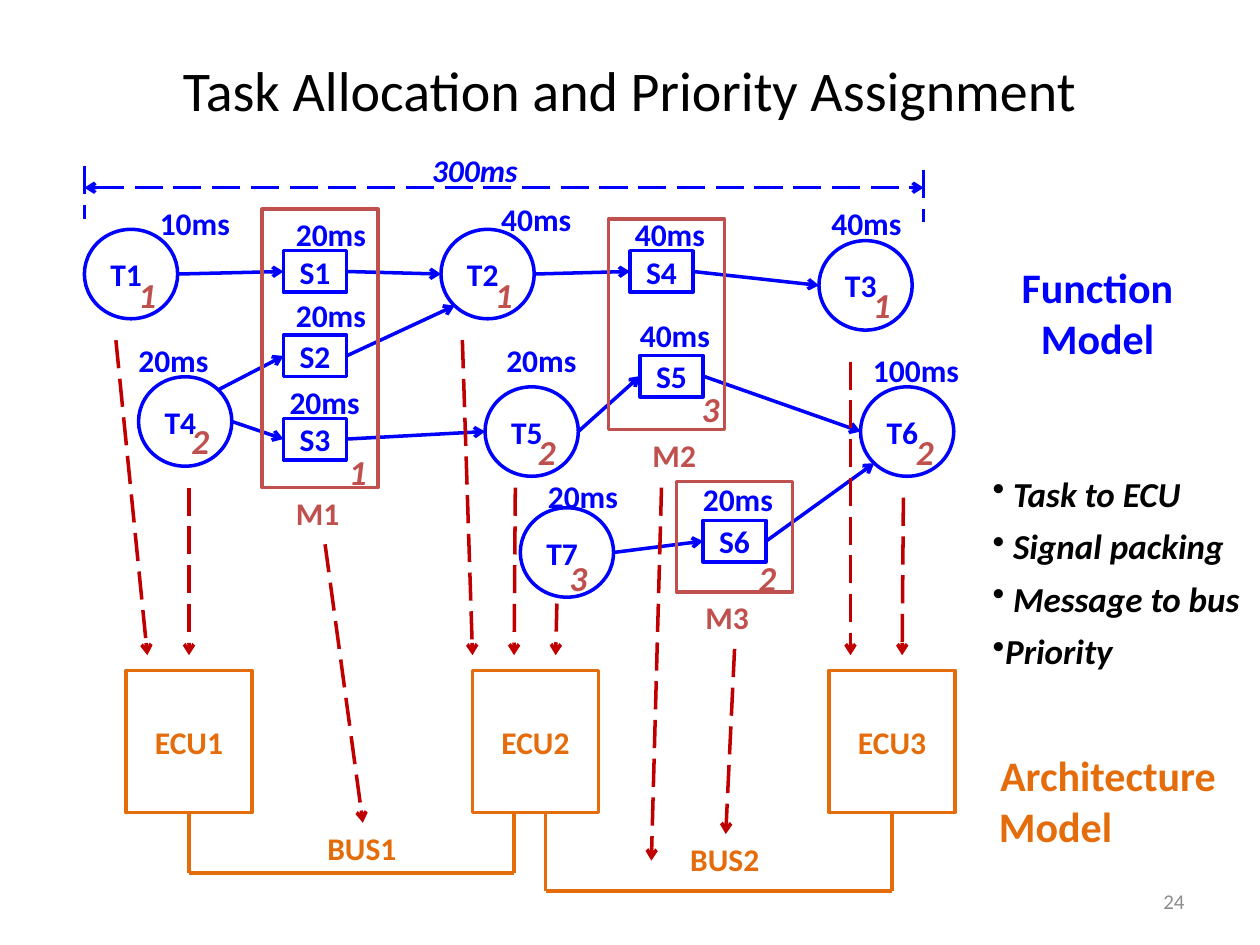
from dataclasses import dataclass
from math import sqrt

from pptx import Presentation
from pptx.dml.color import RGBColor
from pptx.enum.dml import MSO_LINE
from pptx.enum.shapes import MSO_CONNECTOR, MSO_SHAPE
from pptx.enum.text import MSO_ANCHOR, MSO_AUTO_SIZE, PP_ALIGN
from pptx.oxml.ns import qn
from pptx.util import Inches, Pt
from lxml.etree import SubElement


@dataclass(frozen=True)
class Theme:
    font: str = "Calibri"
    black: RGBColor = RGBColor(0x00, 0x00, 0x00)
    gray: RGBColor = RGBColor(0x8C, 0x8C, 0x8C)
    function: RGBColor = RGBColor(0x00, 0x00, 0xFF)
    message: RGBColor = RGBColor(0xC0, 0x50, 0x4D)
    mapping: RGBColor = RGBColor(0xC0, 0x00, 0x00)
    architecture: RGBColor = RGBColor(0xE4, 0x6C, 0x0A)
    title: int = 32
    heading: int = 24
    note: int = 20
    label: int = 18
    footer: int = 12
    stroke: int = 2


@dataclass(frozen=True)
class Box:
    left: float
    top: float
    width: float
    height: float

    def inner(self, x, y, width, height):
        return Box(self.left + x, self.top + y, width, height)

    def point(self, x, y):
        return self.left + x, self.top + y

    def side(self, dx, dy):
        """Point on the inscribed ellipse in direction (dx, dy)."""
        length = sqrt(dx * dx + dy * dy)
        return self.point(self.width / 2 * (1 + dx / length),
                          self.height / 2 * (1 + dy / length))

    def inches(self):
        return [Inches(v) for v in (self.left, self.top, self.width, self.height)]


THEME = Theme()
LABEL_HEIGHT = 0.4

# Task: position, period and its position, priority and its position
TASKS = {
    "T1": (0.17, 0.82, "10ms", 0.67, 0.57, "1", 0.5, 1.12),
    "T2": (3, 0.82, "40ms", 3.38, 0.54, "1", 3.33, 1.12),
    "T3": (6, 0.91, "40ms", 6, 0.57, "1", 6.33, 1.2),
    "T4": (0.6, 1.99, "20ms", 0.5, 1.66, "2", 0.92, 2.28),
    "T5": (3.35, 2.07, "20ms", 3.42, 1.66, "2", 3.67, 2.37),
    "T6": (6.33, 2.07, "100ms", 6.33, 1.74, "2", 6.67, 2.37),
    "T7": (3.63, 3.03, "20ms", 3.75, 2.74, "3", 3.92, 3.37),
}
# Signal: position, period and its position
SIGNALS = {
    "S1": (1.75, 0.99, "20ms", 1.75, 0.66),
    "S2": (1.75, 1.66, "20ms", 1.75, 1.3),
    "S3": (1.75, 2.32, "20ms", 1.7, 1.99),
    "S4": (4.5, 0.99, "40ms", 4.44, 0.66),
    "S5": (4.58, 1.82, "40ms", 4.48, 1.46),
    "S6": (5.08, 3.13, "20ms", 4.98, 2.76),
}
# Message: position, height, label x, priority and its position
MESSAGES = {
    "M1": (1.58, 0.66, 2.21, 1.75, "1", 2.17, 2.53),
    "M2": (4.33, 0.74, 1.67, 4.58, "3", 4.97, 2.03),
    "M3": (4.87, 2.82, 0.88, 5, "2", 5.42, 3.37),
}
RIGHT, LEFT, UP_RIGHT, DOWN_LEFT = (1, 0), (-1, 0), (1, -1), (-1, 1)
# Sender task and its side, signal, receiver task and its side
FLOWS = [
    ("T1", RIGHT, "S1", "T2", LEFT), ("T4", UP_RIGHT, "S2", "T2", DOWN_LEFT),
    ("T4", RIGHT, "S3", "T5", LEFT), ("T2", RIGHT, "S4", "T3", LEFT),
    ("T5", RIGHT, "S5", "T6", LEFT), ("T7", RIGHT, "S6", "T6", DOWN_LEFT),
]
ECU_ARROW_END = 2.7
TASK_ARROWS = [(0.42, 0.2, 0.67), (1, 1.37, 1), (3.17, 0.2, 3.25), (3.59, 1.37, 3.58),
               (3.92, 2.29, 3.91), (6.25, 0.37, 6.25), (6.67, 1.45, 6.66)]
MESSAGE_ARROWS = [(2.08, 1.82, 2.38, 4.03), (4.75, 1.37, 4.67, 4.33),
                  (5.33, 2.65, 5.26, 4.12)]
ECUS = {"ECU1": 0, "ECU2": 2.75, "ECU3": 5.58}
# Bus: left end, right end, depth, label position
BUSES = {"BUS1": (0.5, 3.08, 1.61, 1.5, 1.21), "BUS2": (3.33, 6.08, 1.75, 4.38, 1.3)}


def write(frame, lines, size, color, bold=True, italic=False, align=None):
    for index, line in enumerate(lines):
        paragraph = frame.paragraphs[0] if index == 0 else frame.add_paragraph()
        paragraph.text = line
        paragraph.alignment = align or PP_ALIGN.LEFT
        font = paragraph.font
        font.name, font.size, font.bold, font.italic = THEME.font, Pt(size), bold, italic
        font.color.rgb = color


def add_text(slide, box, lines, size, color, wrap=False, anchor=MSO_ANCHOR.TOP, **style):
    frame = slide.shapes.add_textbox(*box.inches()).text_frame
    frame.word_wrap = wrap
    frame.auto_size = MSO_AUTO_SIZE.NONE if wrap else MSO_AUTO_SIZE.SHAPE_TO_FIT_TEXT
    frame.vertical_anchor = anchor
    write(frame, lines, size, color, **style)
    return frame


def add_label(slide, area, x, y, text, color, width=0.76, **style):
    add_text(slide, area.inner(x, y, width, LABEL_HEIGHT), [text], THEME.label, color, **style)


def add_priority(slide, area, x, y, text):
    add_text(slide, area.inner(x, y, 0.34, 0.44), [text], THEME.note, THEME.message, italic=True)


def add_outline(slide, kind, box, color, text=None, align=PP_ALIGN.CENTER, wrap=True):
    shape = slide.shapes.add_shape(kind, *box.inches())
    shape.shadow.inherit = False
    shape.fill.background()
    shape.line.color.rgb, shape.line.width = color, Pt(THEME.stroke)
    if text:
        shape.text_frame.word_wrap = wrap
        shape.text_frame.vertical_anchor = MSO_ANCHOR.MIDDLE
        write(shape.text_frame, [text], THEME.label, color, align=align)
    return shape


def add_line(slide, start, end, color, dashed=False, heads=()):
    points = [Inches(v) for v in (*start, *end)]
    connector = slide.shapes.add_connector(MSO_CONNECTOR.STRAIGHT, *points)
    connector.line.color.rgb, connector.line.width = color, Pt(THEME.stroke)
    if dashed:
        connector.line.dash_style = MSO_LINE.LONG_DASH
    properties = connector._element.spPr
    for head in heads:
        SubElement(properties.find(qn("a:ln")), qn(f"a:{head}"), type="arrow")
    SubElement(properties, qn("a:effectLst"))
    return connector


def add_function_model(slide, area):
    blue, red = THEME.function, THEME.message
    # Tasks and signals
    circles, signals = {}, {}
    for name, (x, y, *_) in TASKS.items():
        circles[name] = area.inner(x, y, 0.74, 0.71)
        add_outline(slide, MSO_SHAPE.OVAL, circles[name], blue, name, PP_ALIGN.LEFT, False)
    for name, (x, y, *_) in SIGNALS.items():
        signals[name] = add_outline(slide, MSO_SHAPE.RECTANGLE, area.inner(x, y, 0.5, 0.33),
                                    blue, name)
    # Data flow into and out of each signal; the joined end moves to the signal
    for sender, out_side, signal, receiver, in_side in FLOWS:
        start, end = circles[sender].side(*out_side), circles[receiver].side(*in_side)
        add_line(slide, start, end, blue, heads=["tailEnd"]).end_connect(signals[signal], 1)
        add_line(slide, start, end, blue, heads=["tailEnd"]).begin_connect(signals[signal], 3)
    # Messages that pack the signals
    for name, (x, y, height, label_x, priority, px, py) in MESSAGES.items():
        add_outline(slide, MSO_SHAPE.RECTANGLE, area.inner(x, y, 0.92, height), red)
        add_label(slide, area, label_x, y + height, name, red, width=0.55)
        add_priority(slide, area, px, py, priority)
    # Periods and task priorities
    for _, _, period, x, y, *priority in [*TASKS.values(), *SIGNALS.values()]:
        add_label(slide, area, x, y, period, blue, width=0.89 if len(period) > 4 else 0.76)
        if priority:
            text, px, py = priority
            add_priority(slide, area, px, py, text)
    # End-to-end deadline
    for x, top, bottom in [(0.17, 0.32, 0.74), (6.83, 0.35, 0.76)]:
        add_line(slide, area.point(x, top), area.point(x, bottom), blue, dashed=True)
    add_line(slide, area.point(0.17, 0.49), area.point(6.83, 0.49), blue, dashed=True,
             heads=["headEnd", "tailEnd"])
    add_label(slide, area, 2.83, 0.15, "300ms", blue, width=0.95, italic=True)


def add_mapping(slide, area):
    to_ecus = [(*arrow, ECU_ARROW_END) for arrow in TASK_ARROWS]
    for x1, y1, x2, y2 in to_ecus + MESSAGE_ARROWS:
        add_line(slide, area.point(x1, y1), area.point(x2, y2), THEME.mapping,
                 dashed=True, heads=["tailEnd"])


def add_architecture_model(slide, area):
    orange, width, height = THEME.architecture, 1, 1.13
    middles = {}
    for name, x in ECUS.items():
        middles[x + width / 2] = add_outline(
            slide, MSO_SHAPE.RECTANGLE, area.inner(x, 0, width, height), orange, name)
    for name, (left, right, depth, label_x, label_y) in BUSES.items():
        add_line(slide, area.point(left, depth), area.point(right, depth), orange)
        for x in (left, right):
            leg = add_line(slide, area.point(x, height), area.point(x, depth), orange)
            if x in middles:
                leg.begin_connect(middles[x], 2)
        add_label(slide, area, label_x, label_y, name, orange)


def add_side_notes(slide, area):
    add_text(slide, area.inner(0.22, 0, 1.42, 0.91), ["Function", "Model"],
             THEME.heading, THEME.function, align=PP_ALIGN.CENTER)
    frame = add_text(slide, area.inner(0, 1.67, 2.22, 1.7),
                     [" Task to ECU", " Signal packing", " Message to bus", "Priority"],
                     THEME.note, THEME.black, wrap=True, italic=True)
    for paragraph in frame.paragraphs:
        paragraph.space_before = Pt(6)
        properties = paragraph._p.get_or_add_pPr()
        bullet = SubElement(properties, qn("a:buChar"), char="•")
        properties.find(qn("a:defRPr")).addprevious(bullet)
    frame = add_text(slide, area.inner(0.05, 3.87, 1.93, 0.91), ["Architecture", "Model"],
                     THEME.heading, THEME.architecture)
    frame.paragraphs[0].alignment = PP_ALIGN.CENTER


def main():
    presentation = Presentation()
    presentation.slide_width, presentation.slide_height = Inches(10), Inches(7.5)
    slide = presentation.slides.add_slide(presentation.slide_layouts[6])
    add_text(slide, Box(0.5, 0.08, 9, 1.25), ["Task Allocation and Priority Assignment"],
             THEME.title, THEME.black, wrap=True, anchor=MSO_ANCHOR.MIDDLE, bold=False,
             align=PP_ALIGN.CENTER)
    add_function_model(slide, Box(0.5, 1, 7.25, 4.1))
    add_mapping(slide, Box(0.5, 2.5, 7.25, 4.33))
    add_architecture_model(slide, Box(1, 5.32, 6.58, 1.75))
    add_side_notes(slide, Box(7.78, 2.03, 2.22, 4.78))
    add_text(slide, Box(7.17, 6.95, 2.33, 0.4), ["24"], THEME.footer, THEME.gray, wrap=True,
             anchor=MSO_ANCHOR.MIDDLE, bold=False, align=PP_ALIGN.RIGHT)
    presentation.save("out.pptx")


if __name__ == "__main__":
    main()
